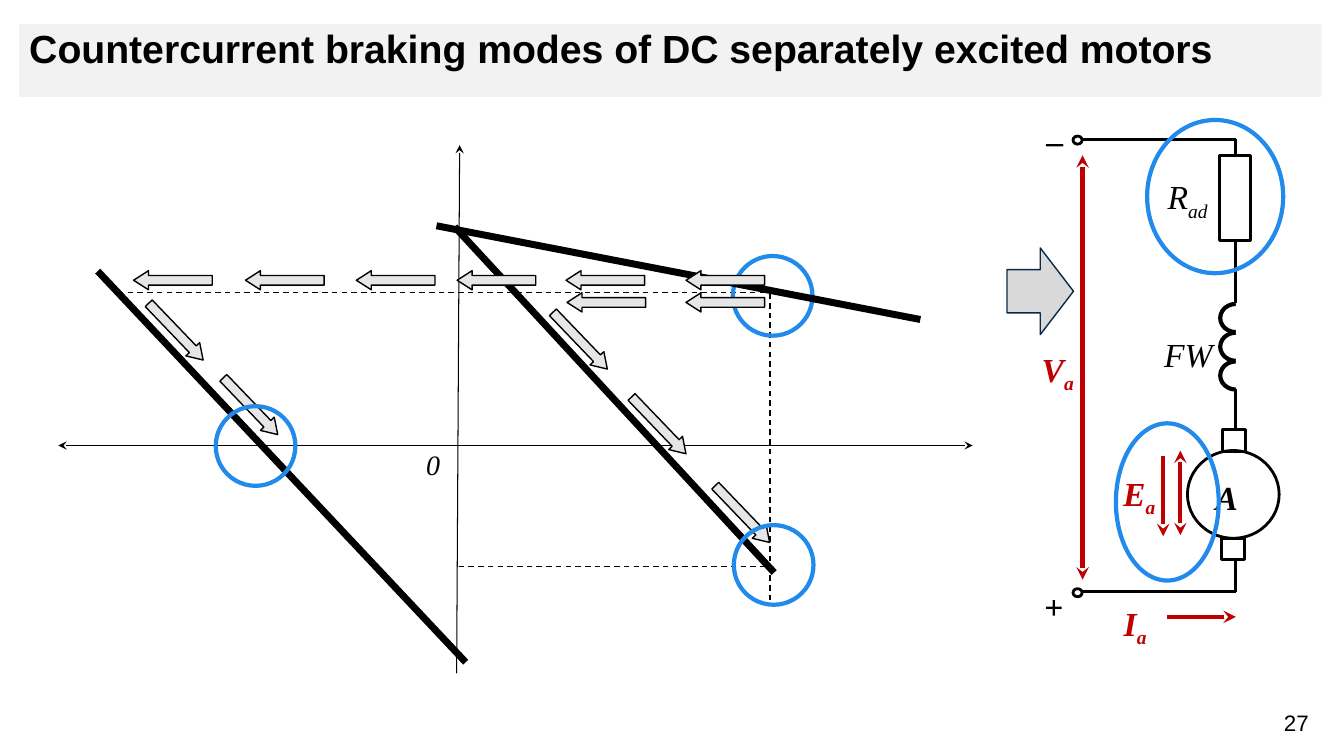
from lxml.etree import SubElement
from pptx import Presentation
from pptx.dml.color import RGBColor
from pptx.enum.dml import MSO_LINE_DASH_STYLE as Dash
from pptx.enum.shapes import MSO_CONNECTOR as Connector, MSO_SHAPE as Shape
from pptx.enum.text import MSO_ANCHOR as Anchor, MSO_AUTO_SIZE as AutoSize, PP_ALIGN as Align
from pptx.oxml.ns import qn
from pptx.util import Inches, Pt

CELL = 0.1
COLUMNS, ROWS = 133.33, 75
COLORS = {
    "ink": "000000",
    "paper": "FFFFFF",
    "band": "F2F2F2",
    "red": "C00000",
    "blue": "228AEB",
    "pale": "E7E6E6",
    "gray": "D9D9D9",
    "navy": "072A4B",
}


def cells(*counts):
    return [Inches(count * CELL) for count in counts]


def color(name):
    return RGBColor.from_string(COLORS[name])


class BrakingSlide:
    sans = "Arial"
    serif = "Times New Roman"

    def __init__(self, presentation):
        self.slide = presentation.slides.add_slide(presentation.slide_layouts[5])
        self.shapes = self.slide.shapes

    def add_run(self, paragraph, text, size, font, ink="ink", bold=False, italic=False, subscript=False):
        run = paragraph.add_run()
        run.text = text
        run.font.size, run.font.name = Pt(size), font
        run.font.bold, run.font.italic = bold, italic
        run.font.color.rgb = color(ink)
        if subscript:
            run._r.get_or_add_rPr().set("baseline", "-25000")

    def title(self, text, left, top, width, height):
        title = self.shapes.title
        title.left, title.top, title.width, title.height = cells(left, top, width, height)
        title.fill.solid()
        title.fill.fore_color.rgb = color("band")
        frame = title.text_frame
        frame.auto_size, frame.word_wrap = AutoSize.NONE, True
        frame.vertical_anchor = Anchor.TOP
        paragraph = frame.paragraphs[0]
        paragraph.alignment, paragraph.line_spacing = Align.LEFT, 0.9
        self.add_run(paragraph, text, 28, self.sans, bold=True)

    def text_box(self, left, top, width, height, wrap=True):
        frame = self.shapes.add_textbox(*cells(left, top, width, height)).text_frame
        frame.word_wrap = wrap
        return frame.paragraphs[0]

    def page_number(self, text, left, top, width, height):
        paragraph = self.text_box(left, top, width, height)
        paragraph.alignment = Align.CENTER
        self.add_run(paragraph, text, 16, self.sans)

    def origin(self, text, left, top, width, height):
        paragraph = self.text_box(left, top, width, height, wrap=False)
        self.add_run(paragraph, text, 20, self.serif, italic=True)

    def symbol(self, text, left, top, width, height, index="", ink="ink", bold=True):
        paragraph = self.text_box(left, top, width, height)
        paragraph.line_spacing, paragraph.space_after = 1.15, Pt(10)
        self.add_run(paragraph, text, 24, self.serif, ink, bold, True)
        if index:
            self.add_run(paragraph, index, 24, self.serif, ink, bold, True, True)

    def shape(self, kind, left, top, width, height, fill=None, line="ink", weight=2, rotation=0):
        shape = self.shapes.add_shape(kind, *cells(left, top, width, height))
        shape.shadow.inherit = False
        shape.rotation = rotation
        if fill:
            shape.fill.solid()
            shape.fill.fore_color.rgb = color(fill)
        else:
            shape.fill.background()
        if line:
            shape.line.color.rgb = color(line)
            shape.line.width = Pt(weight)
        else:
            shape.line.fill.background()
        return shape

    def highlight(self, left, top, width=7.9, height=7.9):
        self.shape(Shape.OVAL, left, top, width, height, line="blue", weight=3)

    def path_arrow(self, left, top, rotation):
        arrow = self.shape(Shape.UP_ARROW, left, top, 1.9, 7.8, "pale", weight=1, rotation=rotation)
        arrow.adjustments[0], arrow.adjustments[1] = 0.5, 0.781

    def line(self, start, end, weight=2, ink="ink", dashed=False, ends=()):
        connector = self.shapes.add_connector(Connector.STRAIGHT, *cells(*start, *end))
        connector.line.color.rgb = color(ink)
        connector.line.width = Pt(weight)
        if dashed:
            connector.line.dash_style = Dash.DASH
        properties = connector._element.spPr
        for end_name in ends:
            SubElement(properties.find(qn("a:ln")), qn(f"a:{end_name}"), type="stealth")
        SubElement(properties, qn("a:effectLst"))


def draw_graph(page):
    both = ("headEnd", "tailEnd")
    page.line((45.6, 14.4), (45.3, 66.8), 0.75, ends=("headEnd",))
    page.line((5.8, 44.2), (96.5, 44.2), 0.75, ends=both)
    page.origin("0", 41.3, 43.9, 4.5, 5.3)
    for start, end in (
        ((76.4, 29.1), (76.4, 59.5)),
        ((11.7, 29), (76.3, 29)),
        ((45.5, 56.2), (76.6, 56.2)),
    ):
        page.line(start, end, 1, dashed=True)
    page.highlight(72.7, 25.4)
    for start, end in (
        ((9.7, 26.9), (46.2, 65.7)),
        ((45.1, 22.5), (76.8, 56.8)),
        ((43.3, 22.4), (91.3, 31.7)),
    ):
        page.line(start, end, 5)
    for top, lefts in ((26.1, (71, 59.2)), (23.9, (71, 59.1, 48.3, 38.3, 27.3, 16.2))):
        for left in lefts:
            page.path_arrow(left, top, 270)
    for left, top in ((56.6, 29.9), (64.4, 38.3), (72.7, 47.1), (16.5, 29), (23.9, 36.4)):
        page.path_arrow(left, top, 136.2)
    page.highlight(72.8, 52.1)
    page.highlight(21.4, 40.3)


def draw_circuit(page):
    wire = 122.6
    for turn in range(3):
        page.shape(Shape.OVAL, 121.05, 30.15 + 2.85 * turn, 3.1, 2.8, "paper", weight=3)
    page.shape(Shape.RECTANGLE, wire, 24.35, 4.6, 17.1, "paper", line=None)
    page.shape(Shape.RECTANGLE, 121, 15.4, 3.1, 8.5)
    page.shape(Shape.RECTANGLE, 121.25, 42.65, 2.3, 2.2)
    for top, bottom in ((13.8, 15.4), (23.9, 30.1), (38.6, 42.7), (55.1, 58.7)):
        page.line((wire, top), (wire, bottom))
    for level in (13.8, 58.7):
        page.shape(Shape.OVAL, 106.45, level - 0.3, 0.9, 0.8)
        page.line((wire, level), (107.3, level))
    page.shape(Shape.OVAL, 117.8, 44.7, 9.1, 8.7)
    page.shape(Shape.RECTANGLE, 121.2, 53.4, 2.3, 2.1, "paper")

    page.symbol("R", 114.85, 16.3, 6.9, 8.6, "ad", bold=False)
    page.symbol("FW", 114.5, 32, 7.2, 5.2, bold=False)
    page.symbol("A", 119.6, 46.2, 5.6, 6.4)
    page.symbol("+", 102.6, 57, 4.6, 6.4)
    page.symbol("–", 102.85, 10.8, 4.7, 6.4)
    page.symbol("V", 102.35, 33.4, 7, 8.5, "a", "red")
    page.symbol("Е", 110.45, 45.7, 7, 8.5, "a", "red")
    page.symbol("I", 110.5, 58.6, 6.6, 6.4, "a", "red")

    both, forward = ("headEnd", "tailEnd"), ("tailEnd",)
    for start, end, ends in (
        ((107.4, 15.4), (107.4, 57.5), both),
        ((117.1, 44.7), (117.1, 53.1), both),
        ((115.4, 45.2), (115.4, 53.2), forward),
        ((115.8, 61.2), (122.6, 61.2), forward),
    ):
        page.line(start, end, 3, "red", ends=ends)
    page.highlight(110.7, 42, 10.2, 15.6)
    page.highlight(113.8, 11.9, 13.5, 15.2)
    page.shape(Shape.RIGHT_ARROW, 99.9, 24.6, 6.6, 8.6, "gray", "navy", 1)


def main():
    presentation = Presentation()
    presentation.slide_width, presentation.slide_height = cells(COLUMNS, ROWS)
    page = BrakingSlide(presentation)
    page.title("Countercurrent braking modes of DC separately excited motors", 1.9, 2.4, 129.2, 7.2)
    page.page_number("27", 125.4, 69.9, 6.4, 3.7)
    draw_graph(page)
    draw_circuit(page)
    presentation.save("out.pptx")


if __name__ == "__main__":
    main()
